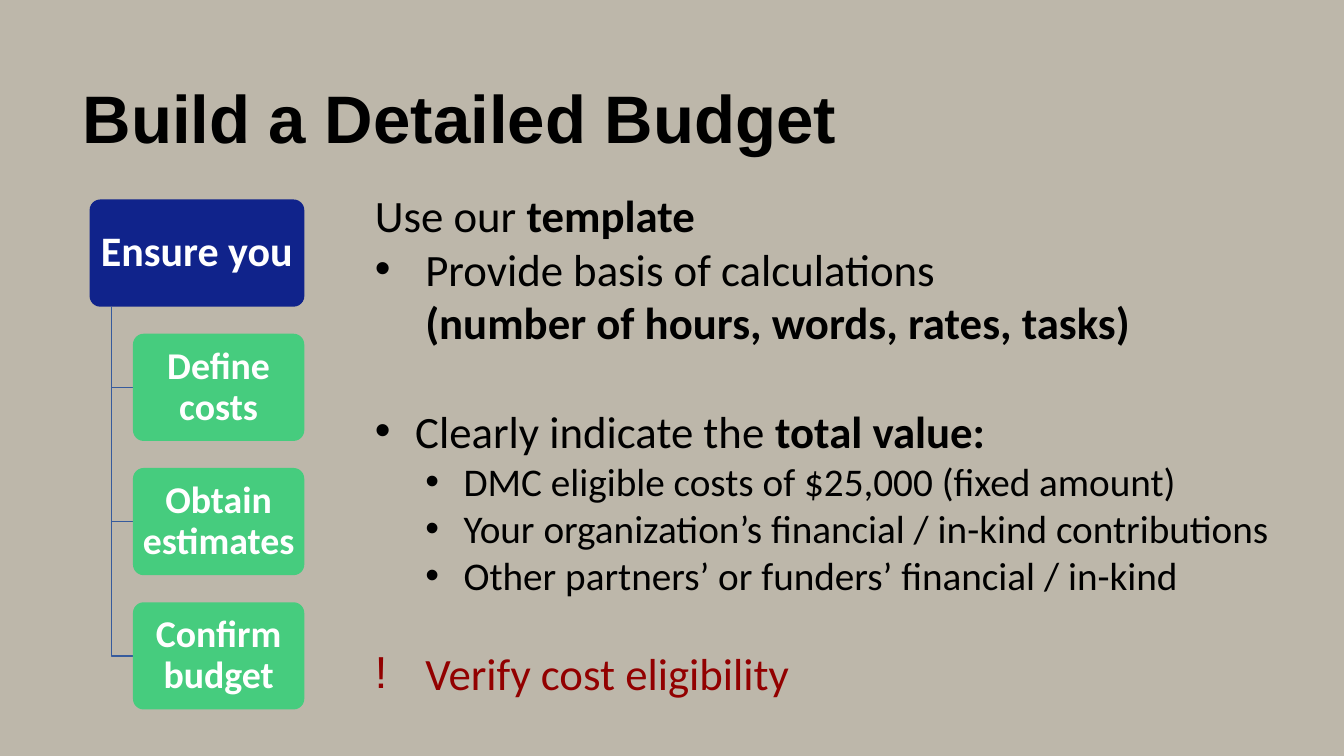
"""Build the detailed budget slide."""
from lxml.etree import SubElement
from pptx import Presentation
from pptx.dml.color import RGBColor
from pptx.enum.shapes import MSO_SHAPE
from pptx.enum.text import MSO_ANCHOR, MSO_AUTO_SIZE, PP_ALIGN
from pptx.oxml.ns import qn
from pptx.util import Pt

HUES = {"back": "BDB7AA", "text": "000000", "white": "FFFFFF", "navy": "10238B",
        "green": "46CC7E", "line": "365B9D", "red": "920000"}


def hue(name):
    return RGBColor.from_string(HUES[name])


def style(run, size, name, color, bold):
    font = run.font
    font.size, font.name, font.bold = Pt(size), name, bold
    font.color.rgb = hue(color)


deck = Presentation()
deck.slide_width, deck.slide_height = Pt(960), Pt(540)
slide = deck.slides.add_slide(deck.slide_layouts[1])
slide.background.fill.solid()
slide.background.fill.fore_color.rgb = hue("back")

title, body = slide.placeholders
title.left, title.top, title.width, title.height = Pt(59), Pt(52), Pt(590), Pt(55)
frame = title.text_frame
frame.text = "Build a Detailed Budget"
frame.auto_size = MSO_AUTO_SIZE.NONE
frame.vertical_anchor = MSO_ANCHOR.TOP
frame.margin_left = frame.margin_top = frame.margin_right = 0
frame.margin_bottom = Pt(20)
para = frame.paragraphs[0]
para.alignment = PP_ALIGN.LEFT
para.line_spacing = Pt(60)
style(para.runs[0], 48, "Arial", "text", True)

TOP, HIGH, STEP = 142.5, 76.6, 95.9
STEM, EDGE, RIGHT = 79.6, 95, 217.4
boxes = [("Ensure you", 64, 30, "navy"), ("Define costs", EDGE, 27, "green"),
         ("Obtain estimates", EDGE, 27, "green"), ("Confirm budget", EDGE, 27, "green")]
for row, (label, left, size, color) in enumerate(boxes):
    top = TOP + row * STEP
    if row:
        mid = Pt(top + HIGH / 2)
        path = slide.shapes.build_freeform(Pt(STEM), Pt(TOP + HIGH))
        path.add_line_segments([(Pt(STEM), mid), (Pt(EDGE), mid)], close=False)
        link = path.convert_to_shape()
        link.shadow.inherit = False
        link.fill.background()
        link.line.color.rgb = hue("line")
        link.line.width = Pt(1)
    box = slide.shapes.add_shape(MSO_SHAPE.ROUNDED_RECTANGLE, Pt(left), Pt(top),
                                 Pt(RIGHT - left), Pt(HIGH))
    box.adjustments[0] = 0.1
    box.shadow.inherit = False
    box.fill.solid()
    box.fill.fore_color.rgb = hue(color)
    box.line.fill.background()
    frame = box.text_frame
    frame.text = label
    frame.word_wrap = True
    frame.vertical_anchor = MSO_ANCHOR.MIDDLE
    frame.margin_left = frame.margin_right = Pt(4)
    frame.margin_top = frame.margin_bottom = Pt(3)
    para = frame.paragraphs[0]
    para.alignment = PP_ALIGN.CENTER
    para.line_spacing = 0.9
    style(para.runs[0], size, "Calibri", "white", True)

body.left, body.top, body.width, body.height = Pt(260.6), Pt(130.3), Pt(656.6), Pt(376)
frame = body.text_frame
frame.auto_size = MSO_AUTO_SIZE.NONE
frame.vertical_anchor = MSO_ANCHOR.TOP
items = [
    (0, "", 0, 0, 0, "text", ["Use our ", "template"]),
    (0, "•", 36, 36, 0, "text",
     ["Provide basis of calculations\v(number of hours, words, rates, tasks)"]),
    (0, "•", 28.8, 28.8, 39, "text", ["Clearly indicate the ", "total value:"]),
    (1, "•", 63.4, 27.4, 0, "text", ["DMC eligible costs of $25,000 (fixed amount)"]),
    (1, "•", 63.4, 27.4, 0, "text",
     ["Your organization’s financial / in-kind contributions"]),
    (1, "•", 63.4, 27.4, 0, "text", ["Other partners’ or funders’ financial / in-kind"]),
    (0, "!", 36, 36, 34, "red", ["Verify cost eligibility"]),
]
for row, (level, mark, left, hang, gap, color, parts) in enumerate(items):
    para = frame.add_paragraph() if row else frame.paragraphs[0]
    para.text = parts[0]
    for part in parts[1:]:
        para.add_run().text = part
    para.level = level
    props = para._p.get_or_add_pPr()
    props.set("marL", str(Pt(left)))
    props.set("indent", str(-Pt(hang)))
    if mark:
        SubElement(props, qn("a:buChar")).set("char", mark)
    else:
        SubElement(props, qn("a:buNone"))
    para.space_before = Pt(gap)
    for spot, run in enumerate(para.runs):
        style(run, 28 if level else 32, "Calibri", color, spot > 0)

deck.save("out.pptx")
